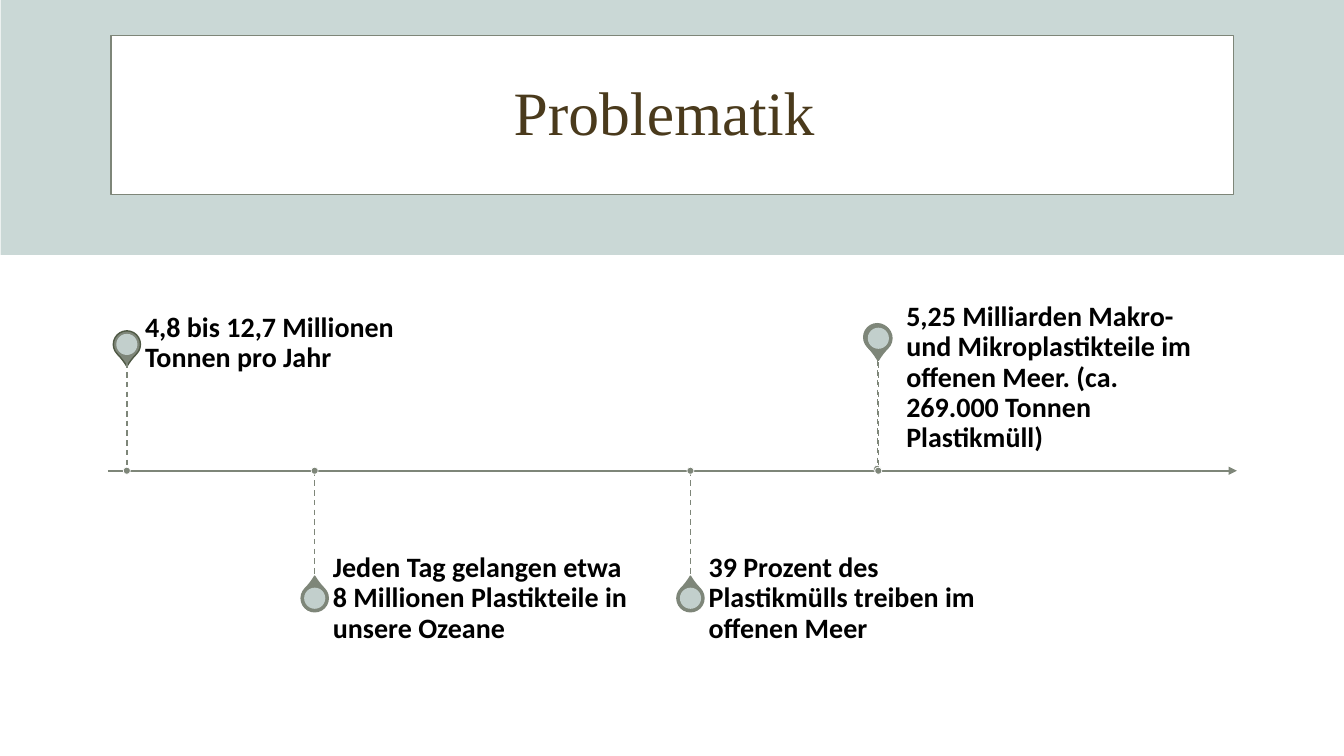
"""Build the Problematik slide: a titled banner above a timeline with pins."""
from dataclasses import dataclass

from lxml import etree
from pptx import Presentation
from pptx.dml.color import RGBColor
from pptx.enum import dml, shapes, text
from pptx.oxml import ns
from pptx.util import Pt


@dataclass(frozen=True)
class Theme:
    mist: str = "CAD8D6"
    sage: str = "7E8679"
    moss: str = "4F5945"
    brown: str = "4A3A1C"
    white: str = "FFFFFF"
    black: str = "000000"
    title_font: str = "Times New Roman"
    label_font: str = "Calibri"
    title_size: int = 44
    label_size: int = 20


THEME = Theme()
AXIS_Y = 336.25
FIRST_X, STEP = 90.6, 134.2
HEAD, EYE, DOT = 19.4, 15.1, 5
STEM_END = 77.4


def add_box(s, kind, x, y, w, h, fill, line=None, weight=1):
    """Add a flat preset shape with a solid fill and an optional outline."""
    sp = s.shapes.add_shape(kind, Pt(x), Pt(y), Pt(w), Pt(h))
    sp.shadow.inherit = False
    sp.fill.solid()
    sp.fill.fore_color.rgb = RGBColor.from_string(fill)
    if line:
        sp.line.color.rgb = RGBColor.from_string(line)
        sp.line.width = Pt(weight)
    else:
        sp.line.fill.background()
    return sp


def add_centred(s, kind, x, y, size, fill, line=None, weight=1):
    """Add a square-bounded shape centred on a point."""
    return add_box(s, kind, x - size / 2, y - size / 2, size, size, fill, line, weight)


def add_line(s, x1, y1, x2, y2, weight):
    """Add a straight sage line without a shadow."""
    line = s.shapes.add_connector(shapes.MSO_CONNECTOR.STRAIGHT, Pt(x1), Pt(y1), Pt(x2), Pt(y2))
    line.line.color.rgb = RGBColor.from_string(THEME.sage)
    line.line.width = Pt(weight)
    etree.SubElement(line.element.spPr, ns.qn("a:effectLst"))
    return line


def add_axis(s):
    """Add the horizontal timeline arrow."""
    axis = add_line(s, 77, AXIS_Y, 883.5, AXIS_Y, 1.5)
    etree.SubElement(axis.line._get_or_add_ln(), ns.qn("a:tailEnd"), type="triangle")


def add_pin(s, x, head_y, axis_y=AXIS_Y, outline=THEME.sage):
    """Add a pin head, its dashed stem and its dot on the axis."""
    above = head_y < axis_y
    head = add_centred(s, shapes.MSO_SHAPE.TEAR, x, head_y, HEAD, THEME.sage, outline)
    head.adjustments[0] = 1.15
    head.rotation = 135 if above else 315
    eye = add_centred(s, shapes.MSO_SHAPE.OVAL, x, head_y, EYE, THEME.mist)
    colour = eye.element.spPr.find(ns.qn("a:solidFill"))[0]
    etree.SubElement(colour, ns.qn("a:alpha"), val="90000")
    end_y = axis_y - STEM_END if above else axis_y + STEM_END
    stem = add_line(s, x, min(end_y, axis_y), x, max(end_y, axis_y), 1)
    stem.line.dash_style = dml.MSO_LINE.DASH
    add_centred(s, shapes.MSO_SHAPE.OVAL, x, axis_y, DOT, THEME.sage, THEME.white, 0.5)


def style_paragraph(p, font, size, colour, bold=False):
    """Set the line spacing and font of a paragraph."""
    p.line_spacing = 0.9
    p.font.name = font
    p.font.size = Pt(size)
    p.font.bold = bold
    p.font.color.rgb = RGBColor.from_string(colour)


def add_label(s, x, middle, words):
    """Add a bold label centred vertically on a height."""
    tf = s.shapes.add_textbox(Pt(x), Pt(middle - 13.5), Pt(223.2), Pt(27)).text_frame
    tf.word_wrap = True
    tf.vertical_anchor = text.MSO_ANCHOR.MIDDLE
    tf.margin_left = tf.margin_top = tf.margin_bottom = 0
    tf.margin_right = Pt(10)
    p = tf.paragraphs[0]
    p.text = words
    style_paragraph(p, THEME.label_font, THEME.label_size, THEME.black, True)


def add_title(s, words):
    """Add the banner and its frame, and set the title over them."""
    add_box(s, shapes.MSO_SHAPE.RECTANGLE, 0.5, 0, 959.5, 182, THEME.mist)
    frame = add_box(s, shapes.MSO_SHAPE.RECTANGLE, 79.2, 25.4, 802, 113.5, THEME.white, THEME.sage)
    title = s.shapes.title
    frame.element.addnext(title.element)
    title.left, title.top, title.width, title.height = Pt(30), Pt(30), Pt(900), Pt(104.4)
    tf = title.text_frame
    tf.word_wrap = True
    tf.vertical_anchor = text.MSO_ANCHOR.MIDDLE
    p = tf.paragraphs[0]
    p.text = words
    p.alignment = text.PP_ALIGN.CENTER
    style_paragraph(p, THEME.title_font, THEME.title_size, THEME.brown)


def main():
    """Build and save the slide."""
    prs = Presentation()
    prs.slide_width, prs.slide_height = Pt(960), Pt(540)
    s = prs.slides.add_slide(prs.slide_layouts[5])
    add_title(s, "Problematik ")
    add_axis(s)
    last_x = FIRST_X + 4 * STEP
    add_pin(s, last_x - 0.8, 240.9, AXIS_Y - 1.4)
    facts = [
        (0, 246, 13, 245.5, THEME.moss, "4,8 bis 12,7 Millionen Tonnen pro Jahr"),
        (1, 427.3, 13, 427.7, THEME.sage,
         "Jeden Tag gelangen etwa 8 Millionen Plastikteile in unsere Ozeane"),
        (3, 427.3, 13, 427.7, THEME.sage, "39 Prozent des Plastikmülls treiben im offenen Meer"),
        (4, 241.6, 20, 270, THEME.sage,
         "5,25 Milliarden Makro- und Mikroplastikteile im offenen Meer. "
         "(ca. 269.000 Tonnen Plastikmüll)"),
    ]
    for slot, head_y, gap, middle, outline, words in facts:
        x = FIRST_X + slot * STEP
        add_pin(s, x, head_y, outline=outline)
        add_label(s, x + gap, middle, words)
    prs.save("out.pptx")


if __name__ == "__main__":
    main()
